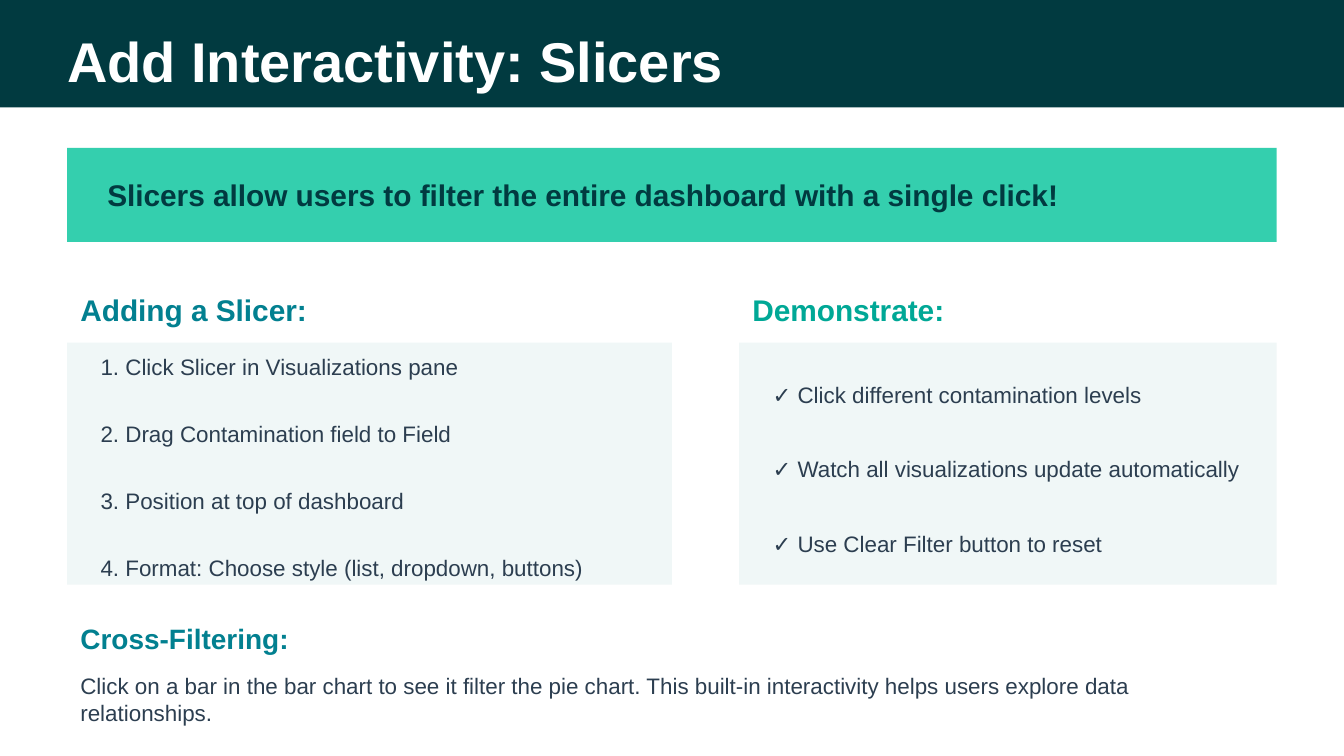
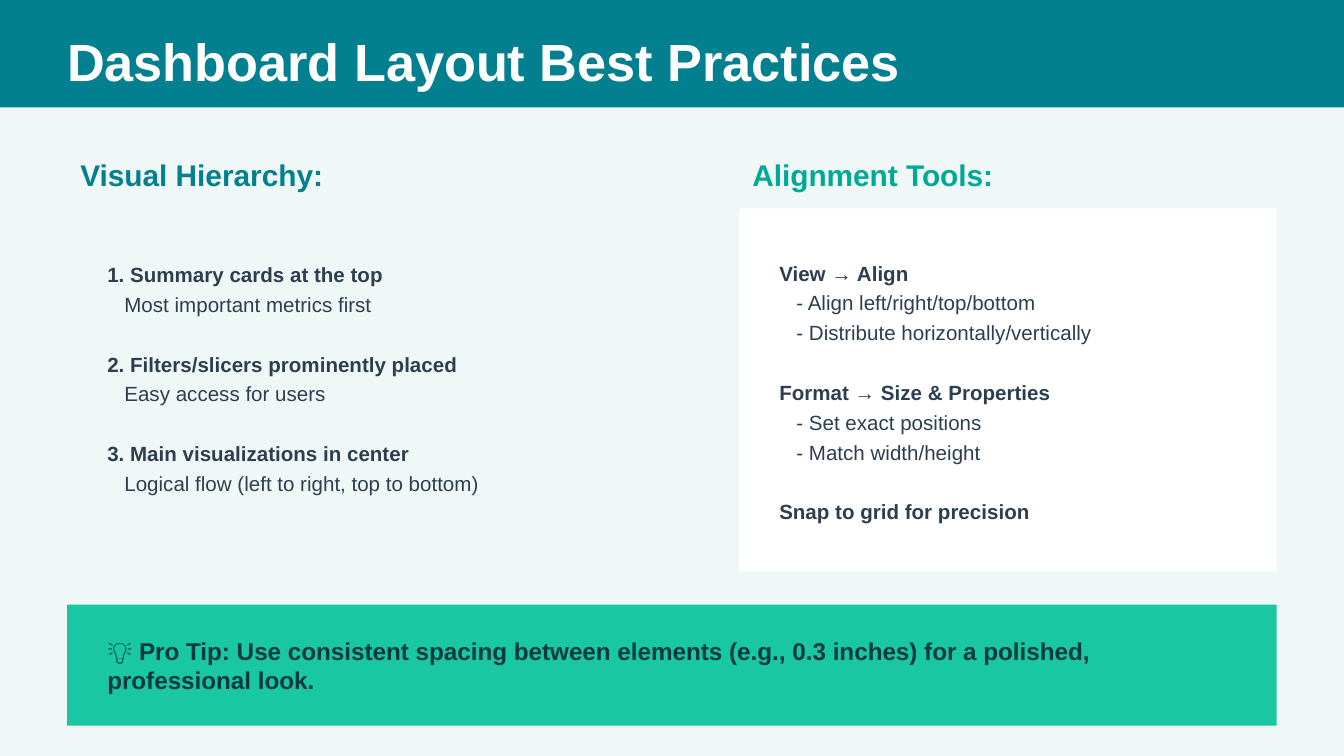
"""Build two slides on dashboard slicers and layout practices."""
from lxml.etree import SubElement
from pptx import Presentation
from pptx.dml.color import RGBColor
from pptx.enum.shapes import MSO_SHAPE as Shape
from pptx.enum.text import MSO_ANCHOR as Anchor
from pptx.oxml.ns import qn
from pptx.util import Pt

FONT = "Arial"
DARK, TEAL, GREEN, MINT = "013A40", "028090", "00A896", "02C39A"
PALE, WHITE, INK = "F0F7F7", "FFFFFF", "2C3E50"
LEFT, RIGHT, FULL, WIDE, NARROW = 36, 396, 648, 324, 288
DETAIL_INDENT = 9.17
color = RGBColor.from_string


def add_panel(page, area, fill, opacity=100):
    panel = page.shapes.add_shape(Shape.RECTANGLE, *map(Pt, area))
    panel.shadow.inherit = False
    panel.line.fill.background()
    panel.fill.solid()
    panel.fill.fore_color.rgb = color(fill)
    if opacity < 100:
        tint = panel.fill._xPr.find(qn("a:solidFill"))[0]
        SubElement(tint, qn("a:alpha")).set("val", str(opacity * 1000))


def add_text(page, area, groups, size, ink, bold=True, leading=None, inset=True):
    box = page.shapes.add_textbox(*map(Pt, area))
    frame = box.text_frame
    frame.word_wrap = True
    frame.vertical_anchor = Anchor.MIDDLE
    if not inset:
        frame.margin_left = frame.margin_right = 0
        frame.margin_top = frame.margin_bottom = 0
    for group_index, group in enumerate(groups):
        for line_index, line in enumerate(group):
            first = group_index == line_index == 0
            para = frame.paragraphs[0] if first else frame.add_paragraph()
            if leading:
                para.line_spacing = Pt(leading)
                if group_index and not line_index:
                    para.space_before = Pt(leading)
            if line_index:
                para._p.get_or_add_pPr().set("marL", str(Pt(DETAIL_INDENT)))
            span = para.add_run()
            span.text = line
            span.font.name = FONT
            span.font.size = Pt(size)
            span.font.bold = bold and not line_index
            span.font.color.rgb = color(ink)


deck = Presentation()
deck.slide_width, deck.slide_height = Pt(720), Pt(405)

pages = []
for title, size, band, background in [
    ("Add Interactivity: Slicers", 30, DARK, WHITE),
    ("Dashboard Layout Best Practices", 28, TEAL, PALE),
]:
    page = deck.slides.add_slide(deck.slide_layouts[6])
    page.background.fill.solid()
    page.background.fill.fore_color.rgb = color(background)
    add_panel(page, (0, 0, 720, 57.6), band)
    add_text(page, (LEFT, 10.8, FULL, 43.2), [[title]], size, WHITE, inset=False)
    pages.append(page)
slicers, layout = pages

for page, top, left_heading, right_heading in [
    (slicers, 151.2, "Adding a Slicer:", "Demonstrate:"),
    (layout, 79.2, "Visual Hierarchy:", "Alignment Tools:"),
]:
    add_text(page, (LEFT, top, WIDE, 28.8), [[left_heading]], 16, TEAL)
    add_text(page, (RIGHT, top, NARROW, 28.8), [[right_heading]], 16, GREEN)

add_panel(slicers, (LEFT, 79.2, FULL, 50.4), MINT, 80)
add_text(slicers, (50.4, 90, 619.2, 28.8),
         [["Slicers allow users to filter the entire dashboard with a single click!"]],
         16, DARK)

steps = [
    ["1. Click Slicer in Visualizations pane"],
    ["2. Drag Contamination field to Field"],
    ["3. Position at top of dashboard"],
    ["4. Format: Choose style (list, dropdown, buttons)"],
]
checks = [
    ["✓ Click different contamination levels"],
    ["✓ Watch all visualizations update automatically"],
    ["✓ Use Clear Filter button to reset"],
]
for left, width, items, leading in [
    (LEFT, WIDE, steps, 18),
    (RIGHT, NARROW, checks, 20),
]:
    add_panel(slicers, (left, 183.6, width, 129.6), PALE)
    add_text(slicers, (left + 10.8, 194.4, width - 21.6, 108), items, 12, INK,
             bold=False, leading=leading)

add_text(slicers, (LEFT, 331.2, FULL, 21.6), [["Cross-Filtering:"]], 15, TEAL)
add_text(slicers, (LEFT, 356.4, FULL, 36),
         [["Click on a bar in the bar chart to see it filter the pie chart. "
           "This built-in interactivity helps users explore data relationships."]],
         12, INK, bold=False)

hierarchy = [
    ["1. Summary cards at the top", "Most important metrics first"],
    ["2. Filters/slicers prominently placed", "Easy access for users"],
    ["3. Main visualizations in center", "Logical flow (left to right, top to bottom)"],
]
tools = [
    ["View → Align", "- Align left/right/top/bottom", "- Distribute horizontally/vertically"],
    ["Format → Size & Properties", "- Set exact positions", "- Match width/height"],
    ["Snap to grid for precision"],
]
add_panel(layout, (RIGHT, 111.6, NARROW, 194.4), WHITE)
for area, groups in [
    ((50.4, 111.6, 309.6, 180), hierarchy),
    ((410.4, 122.4, 259.2, 172.8), tools),
]:
    add_text(layout, area, groups, 11, INK, leading=16)

add_panel(layout, (LEFT, 324, FULL, 64.8), MINT, 90)
add_text(layout, (50.4, 338.4, 619.2, 36),
         [["💡 Pro Tip: Use consistent spacing between elements (e.g., 0.3 inches) "
           "for a polished, professional look."]], 13, DARK)

deck.save("out.pptx")
